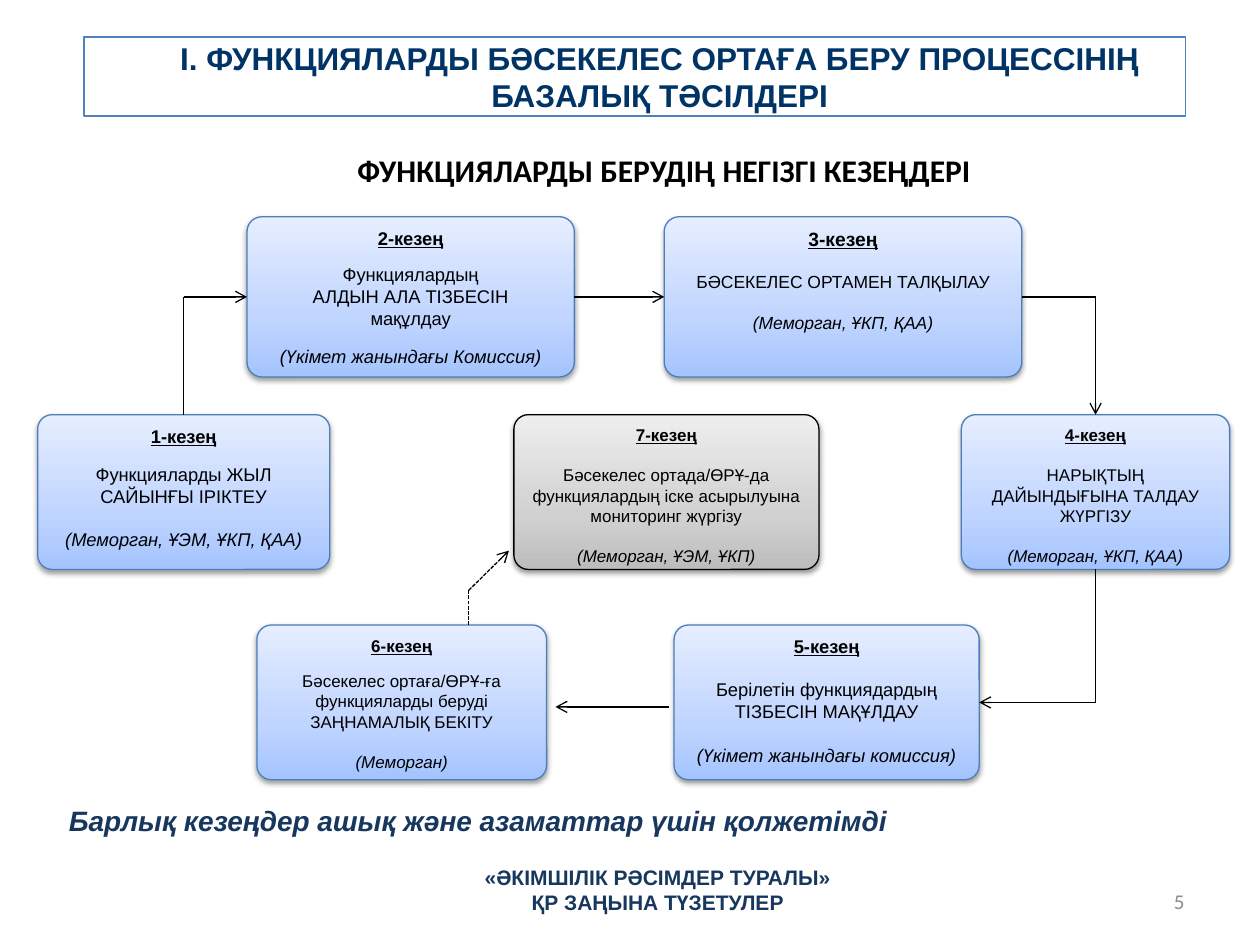
from dataclasses import dataclass
from copy import deepcopy
from lxml.etree import SubElement
from pptx import Presentation
from pptx.dml.color import RGBColor
from pptx.enum.dml import MSO_LINE
from pptx.enum.shapes import MSO_CONNECTOR, MSO_SHAPE
from pptx.enum.text import MSO_ANCHOR, PP_ALIGN
from pptx.oxml.ns import qn
from pptx.util import Cm, Pt

TOP, LEFT, BOTTOM, RIGHT = range(4)


@dataclass(frozen=True)
class Theme:
    ink: str = "000000"
    title: str = "003366"
    navy: str = "17375E"
    frame: str = "4F81BD"
    edge: str = "4B7EBC"
    pale: str = "8C8C8C"
    white: str = "FFFFFF"
    blue: tuple = ("A4C4FF", "BFD4FF", "E6EEFF")
    gray: tuple = ("BDBDBD", "D1D1D1", "EEEEEE")
    stops: tuple = (0, 0.35, 1)
    big: float = 18
    mid: float = 16
    small: float = 12
    thin: float = 0.75
    leading: float = 1.15


THEME = Theme()


def tint(code):
    return RGBColor.from_string(code)


def write(frame, text, size, color=THEME.ink, font="Arial", bold=False,
          italic=False, under=False, align=PP_ALIGN.CENTER, before=0):
    """Add one paragraph; a vertical tab in the text breaks the line."""
    para = frame.paragraphs[0]
    if para.text:
        para = frame.add_paragraph()
    para.text = text
    para.alignment = align
    para.space_before = Pt(before)
    for run in para.runs:
        face = run.font
        face.name, face.size, face.color.rgb = font, Pt(size), tint(color)
        face.bold, face.italic, face.underline = bold, italic, under
    return para


def label(slide, box, lines, size, wrap=True, anchor=MSO_ANCHOR.TOP, **style):
    frame = slide.shapes.add_textbox(*map(Cm, box)).text_frame
    frame.word_wrap = wrap
    frame.vertical_anchor = anchor
    for line in lines:
        write(frame, line, size, **style)


def title(slide, box, text):
    shape = slide.shapes.add_shape(MSO_SHAPE.RECTANGLE, *map(Cm, box))
    shape.shadow.inherit = False
    shape.fill.solid()
    shape.fill.fore_color.rgb = tint(THEME.white)
    shape.line.color.rgb = tint(THEME.frame)
    shape.line.width = Pt(1)
    frame = shape.text_frame
    frame.word_wrap = True
    frame.vertical_anchor = MSO_ANCHOR.MIDDLE
    para = write(frame, text, THEME.big, THEME.title, bold=True)
    para._p.get_or_add_pPr().set("marL", str(Cm(1)))


def shade(shape, colors):
    """Fill upwards with a three-stop gradient and drop a soft shadow."""
    shape.fill.gradient()
    shape.fill.gradient_angle = 90
    props = shape._element.spPr
    stops = props.find(qn("a:gradFill")).find(qn("a:gsLst"))
    stops.append(deepcopy(stops[0]))
    for stop, color, place in zip(shape.fill.gradient_stops, colors, THEME.stops):
        stop.color.rgb = tint(color)
        stop.position = place
    shape.shadow.inherit = False
    drop = SubElement(props.find(qn("a:effectLst")), qn("a:outerShdw"),
                      blurRad=str(Pt(3.1)), dist=str(Pt(1.6)),
                      dir="5400000", rotWithShape="0")
    black = SubElement(drop, qn("a:srgbClr"), val=THEME.ink)
    SubElement(black, qn("a:alpha"), val="38000")


def stage(slide, box, num, body, note, size, gaps, head=None,
          colors=THEME.blue, edge=THEME.edge):
    """Draw one step; gaps are the blank line sizes around its body."""
    shape = slide.shapes.add_shape(MSO_SHAPE.ROUNDED_RECTANGLE, *map(Cm, box))
    shape.adjustments[0] = 0.093
    shade(shape, colors)
    shape.line.color.rgb = tint(edge)
    shape.line.width = Pt(THEME.thin)
    frame = shape.text_frame
    frame.word_wrap = True
    frame.vertical_anchor = MSO_ANCHOR.TOP
    over, below = (gap * THEME.leading for gap in gaps)
    write(frame, f"{num}-кезең", head or size, bold=True, under=True)
    write(frame, body, size, before=over)
    write(frame, note, size, italic=True, before=below)
    return shape


def port(shape, side):
    """Return the middle of one side of a shape."""
    x, y = shape.left + shape.width // 2, shape.top + shape.height // 2
    return {TOP: (x, shape.top), LEFT: (shape.left, y),
            BOTTOM: (x, shape.top + shape.height),
            RIGHT: (shape.left + shape.width, y)}[side]


def link(slide, start, end, arrow=True, dash=False):
    """Draw a line; each end is a point or a (shape, side) pair."""
    ends = [port(*end) if hasattr(end[0], "shape_id") else end
            for end in (start, end)]
    wire = slide.shapes.add_connector(MSO_CONNECTOR.STRAIGHT, *ends[0], *ends[1])
    if ends[0] is not start:
        wire.begin_connect(*start)
    if ends[1] is not end:
        wire.end_connect(*end)
    wire.line.color.rgb = tint(THEME.ink)
    wire.line.width = Pt(THEME.thin)
    if dash:
        wire.line.dash_style = MSO_LINE.SQUARE_DOT
    props = wire._element.spPr
    if arrow:
        SubElement(props.find(qn("a:ln")), qn("a:tailEnd"), type="arrow")
    SubElement(props, qn("a:effectLst"))


def bend(slide, start, end):
    """Join two sides with a right angle, leaving upright or level."""
    (x1, y1), (x2, y2) = port(*start), port(*end)
    turn = (x1, y2) if start[1] in (TOP, BOTTOM) else (x2, y1)
    link(slide, start, turn, arrow=False)
    link(slide, turn, end)


def flow(slide, box):
    """Lay out the seven steps and the arrows between them."""
    left, top, _, _ = box
    high, tall = 3.23, 3.12
    mid, low = 3.99, 8.23

    def step(x, y, wide, deep, *args, **style):
        return stage(slide, (left + x, top + y, wide, deep), *args, **style)

    def spot(x, y):
        return Cm(left + x), Cm(top + y)

    seven = step(9.6, mid, 6.15, tall, 7,
                 "Бәсекелес ортада/ӨРҰ-да функциялардың іске асырылуына мониторинг жүргізу",
                 "(Меморган, ҰЭМ, ҰКП)", 9.7, (9.7, 9.7),
                 colors=THEME.gray, edge=THEME.ink)
    two = step(4.22, 0, 6.6, high, 2,
               "Функциялардың\vАЛДЫН АЛА ТІЗБЕСІН\vмақұлдау",
               "(Үкімет жанындағы Комиссия)", 10.5, (7, 8))
    one = step(0, mid, 5.89, tall, 1, "Функцияларды ЖЫЛ САЙЫНҒЫ ІРІКТЕУ",
               "(Меморган, ҰЭМ, ҰКП, ҚАА)", 10.5, (8, 10.5))
    four = step(18.62, mid, 5.41, tall, 4,
                "НАРЫҚТЫҢ ДАЙЫНДЫҒЫНА ТАЛДАУ ЖҮРГІЗУ",
                "(Меморган, ҰКП, ҚАА)", 9.7, (9.7, 9.7))
    five = step(12.83, low, 6.15, tall, 5,
                "Берілетін функциядардың ТІЗБЕСІН МАҚҰЛДАУ",
                "(Үкімет жанындағы комиссия)", 10.5, (10.5, 10.5))
    step(4.42, low, 5.84, tall, 6,
         "Бәсекелес ортаға/ӨРҰ-ға функцияларды беруді ЗАҢНАМАЛЫҚ БЕКІТУ",
         "(Меморган)", 9.7, (7.4, 9.7))
    three = step(12.63, 0, 7.21, high, 3, "БӘСЕКЕЛЕС ОРТАМЕН ТАЛҚЫЛАУ",
                 "(Меморган, ҰКП, ҚАА)", 10, (10, 10), head=11)

    bend(slide, (one, TOP), (two, LEFT))
    link(slide, (two, RIGHT), (three, LEFT))
    bend(slide, (three, RIGHT), (four, TOP))
    bend(slide, (four, BOTTOM), (five, RIGHT))
    link(slide, spot(12.73, 9.88), spot(10.44, 9.88))
    turn = spot(8.69, 7.53)
    link(slide, spot(8.69, low), turn, arrow=False, dash=True)
    link(slide, turn, spot(9.5, 6.73), dash=True)


def main():
    deck = Presentation()
    deck.slide_width, deck.slide_height = Cm(25.4), Cm(19.05)
    slide = deck.slides.add_slide(deck.slide_layouts[6])
    title(slide, (1.7, 0.74, 22.2, 1.6),
          "I. ФУНКЦИЯЛАРДЫ БӘСЕКЕЛЕС ОРТАҒА БЕРУ ПРОЦЕССІНІҢ\vБАЗАЛЫҚ ТӘСІЛДЕРІ")
    flow(slide, (0.76, 4.37, 24.03, 11.35))
    label(slide, (18.21, 17.65, 5.92, 1.02), ["5"], THEME.small,
          color=THEME.pale, font="Calibri", align=PP_ALIGN.RIGHT,
          anchor=MSO_ANCHOR.MIDDLE)
    label(slide, (6.81, 2.92, 13.16, 1.02),
          ["ФУНКЦИЯЛАРДЫ БЕРУДІҢ НЕГІЗГІ КЕЗЕҢДЕРІ"], THEME.big,
          font="Calibri", bold=True, wrap=False)
    label(slide, (6.91, 17.3, 12.7, 1.27),
          ["«ӘКІМШІЛІК РӘСІМДЕР ТУРАЛЫ»", "ҚР ЗАҢЫНА ТҮЗЕТУЛЕР"],
          THEME.small, color=THEME.navy, bold=True)
    label(slide, (1.14, 16.08, 17.35, 0.94),
          ["Барлық кезеңдер ашық және азаматтар үшін қолжетімді"], THEME.mid,
          color=THEME.navy, bold=True, italic=True, align=PP_ALIGN.JUSTIFY)
    deck.save("out.pptx")


if __name__ == "__main__":
    main()
